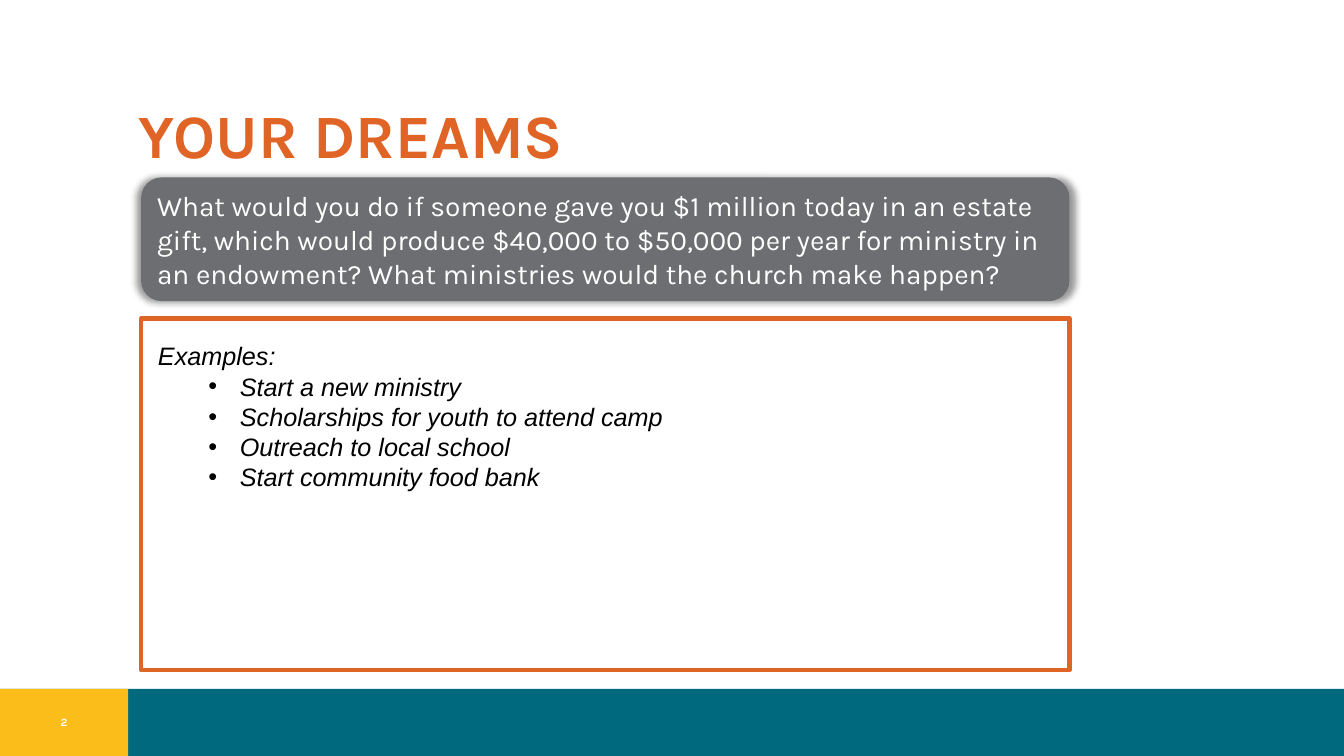
from lxml import etree
from pptx import Presentation
from pptx import util as u
from pptx.dml.color import RGBColor
from pptx.enum import shapes, text
from pptx.oxml import ns

TEAL = RGBColor(0x00, 0x69, 0x7D)
YELLOW = RGBColor(0xFB, 0xBD, 0x1A)
ORANGE = RGBColor(0xE0, 0x64, 0x25)
GRAY = RGBColor(0x6D, 0x6E, 0x71)
WHITE = RGBColor(0xFF, 0xFF, 0xFF)
BLACK = RGBColor(0x00, 0x00, 0x00)

SLIDE_WIDTH, SLIDE_HEIGHT = 960, 540
FOOTER_TOP, NUMBER_WIDTH = 492, 91.6
PANEL_LEFT, PANEL_WIDTH = 100.8, 663.1

QUESTION = (
    "What would you do if someone gave you $1 million today in an estate gift, "
    "which would produce $40,000 to $50,000 per year for ministry in an endowment? "
    "What ministries would the church make happen?"
)
EXAMPLES = [
    "Start a new ministry",
    "Scholarships for youth to attend camp",
    "Outreach to local school",
    "Start community food bank",
]


def write(paragraph, content, *, size, color, font="Karla", bold=False, italic=False,
          align=text.PP_ALIGN.LEFT, line_spacing=None, bullet=False):
    if bullet:
        properties = paragraph._p.get_or_add_pPr()
        properties.set("marL", str(u.Pt(58.5)))
        properties.set("indent", str(u.Pt(-22.5)))
        etree.SubElement(properties, ns.qn("a:buFont"), typeface="Arial")
        etree.SubElement(properties, ns.qn("a:buChar"), char="•")
    paragraph.alignment = align
    if line_spacing:
        paragraph.line_spacing = line_spacing
    run = paragraph.add_run()
    run.text = content
    run.font.name = font
    run.font.size = u.Pt(size)
    run.font.color.rgb = color
    run.font.bold = bold
    run.font.italic = italic


class SlideBuilder:
    def __init__(self, presentation):
        self.slide = presentation.slides.add_slide(presentation.slide_layouts[6])
        self.line_width = u.Pt(3)

    def panel(self, left, top, width, height, *, fill=None, line=None,
              kind=shapes.MSO_SHAPE.RECTANGLE):
        shape = self.slide.shapes.add_shape(
            kind, u.Pt(left), u.Pt(top), u.Pt(width), u.Pt(height))
        shape.shadow.inherit = False
        if fill is None:
            shape.fill.background()
        else:
            shape.fill.solid()
            shape.fill.fore_color.rgb = fill
        if line is None:
            shape.line.fill.background()
        else:
            shape.line.color.rgb = line
            shape.line.width = self.line_width
        return shape

    def text_box(self, left, top, width, height, anchor=text.MSO_ANCHOR.TOP):
        frame = self.slide.shapes.add_textbox(
            u.Pt(left), u.Pt(top), u.Pt(width), u.Pt(height)).text_frame
        frame.word_wrap = True
        frame.vertical_anchor = anchor
        return frame

    def glow_shadow(self, shape):
        """Give the shape a soft shadow that shows evenly on all sides."""
        effects = shape._element.spPr.find(ns.qn("a:effectLst"))
        shadow = etree.SubElement(
            effects, ns.qn("a:outerShdw"), blurRad=str(u.Pt(5)), dist="0", dir="0",
            sx="101000", sy="101000", algn="ctr", rotWithShape="0")
        color = etree.SubElement(shadow, ns.qn("a:srgbClr"), val=str(BLACK))
        etree.SubElement(color, ns.qn("a:alpha"), val="40000")


def main():
    presentation = Presentation()
    presentation.slide_width = u.Pt(SLIDE_WIDTH)
    presentation.slide_height = u.Pt(SLIDE_HEIGHT)
    builder = SlideBuilder(presentation)

    footer_height = SLIDE_HEIGHT - FOOTER_TOP
    builder.panel(0, FOOTER_TOP, SLIDE_WIDTH, footer_height, fill=TEAL)
    builder.panel(0, FOOTER_TOP, NUMBER_WIDTH, footer_height, fill=YELLOW)

    title = builder.text_box(92.2, 72, 776, 104.4)
    write(title.paragraphs[0], "YOUR DREAMS", size=44, color=ORANGE, bold=True,
          line_spacing=0.9)

    number = builder.text_box(0, 506.2, NUMBER_WIDTH, 19.4, text.MSO_ANCHOR.MIDDLE)
    write(number.paragraphs[0], "2", size=8, color=WHITE, bold=True,
          align=text.PP_ALIGN.CENTER)

    question = builder.panel(PANEL_LEFT, 126.7, PANEL_WIDTH, 88.4, fill=GRAY,
                             kind=shapes.MSO_SHAPE.ROUNDED_RECTANGLE)
    builder.glow_shadow(question)
    question.text_frame.word_wrap = True
    question.text_frame.vertical_anchor = text.MSO_ANCHOR.MIDDLE
    write(question.text_frame.paragraphs[0], QUESTION, size=20, color=WHITE)

    builder.panel(PANEL_LEFT, 227.5, PANEL_WIDTH, 251.3, line=ORANGE)
    examples = builder.text_box(105.8, 239.8, 653, 138.2)
    style = dict(size=18, color=BLACK, font="Arial", italic=True)
    write(examples.paragraphs[0], "Examples:", **style)
    for example in EXAMPLES:
        write(examples.add_paragraph(), example, bullet=True, **style)

    presentation.save("out.pptx")


if __name__ == "__main__":
    main()
